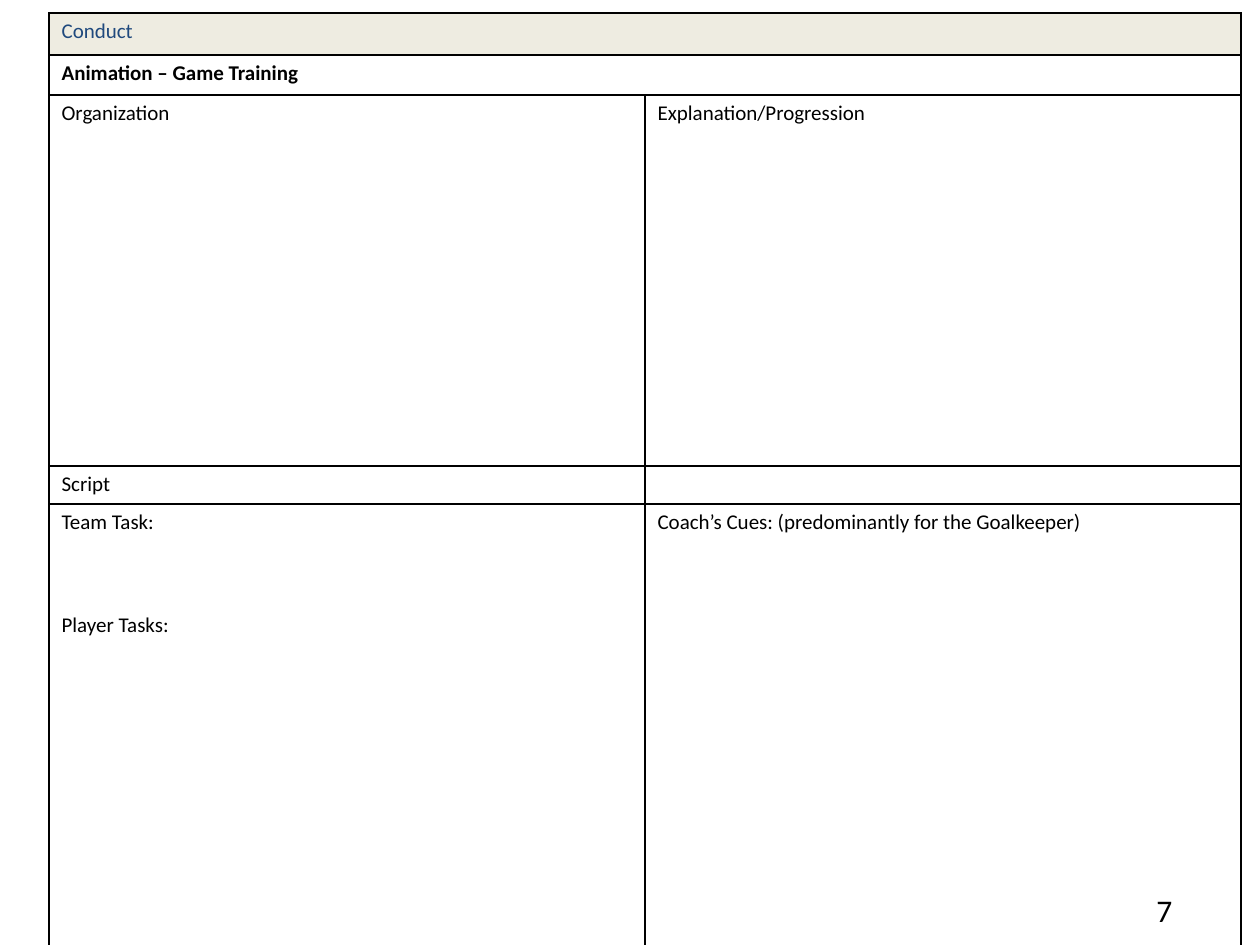
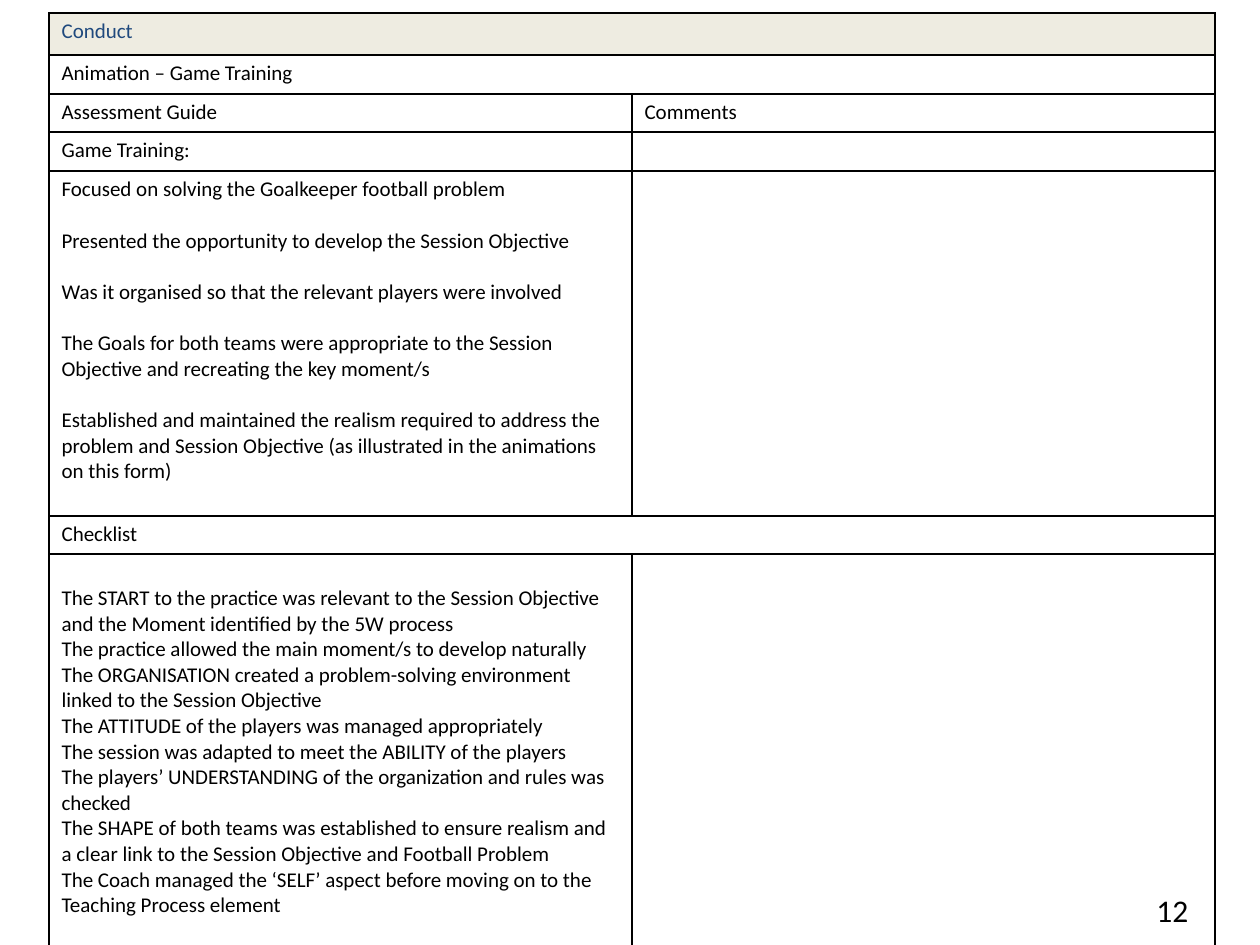
import dataclasses
import lxml.etree
import pptx
import pptx.dml.color
import pptx.oxml.ns
import pptx.util


@dataclasses.dataclass(frozen=True)
class Theme:
    font: str = "Calibri"
    ink: str = "000000"
    blue: str = "1F497D"
    sand: str = "EEECE1"
    white: str = "FFFFFF"
    body: int = 12
    number: int = 18
    line: float = 14.65
    rule: int = 1


@dataclasses.dataclass(frozen=True)
class Row:
    high: int
    left: tuple = ()
    right: tuple = ()
    span: bool = False
    bold: bool = False
    head: bool = False
    gap: int = 0
    lead: int = 0


def px(count):
    return pptx.util.Emu(round(count * 914400 / 126))


def color(code):
    return pptx.dml.color.RGBColor.from_string(code)


def child(node, tag, **attrs):
    return lxml.etree.SubElement(node, pptx.oxml.ns.qn(tag), **attrs)


class Deck:
    def __init__(self, theme):
        self.theme = theme
        self.file = pptx.Presentation()
        self.file.slide_width = px(1260)
        self.file.slide_height = px(945)
        self.slide = None

    def page(self):
        self.slide = self.file.slides.add_slide(self.file.slide_layouts[6])

    def run(self, para, text, size, ink, bold=False):
        font_run = para.add_run()
        font_run.text = text
        font = font_run.font
        font.name, font.size, font.bold = self.theme.font, pptx.util.Pt(size), bold
        font.color.rgb = color(ink)

    def border(self, cell):
        props = cell._tc.get_or_add_tcPr()
        width = str(pptx.util.Pt(self.theme.rule))
        for side in ("a:lnL", "a:lnR", "a:lnT", "a:lnB"):
            line = child(props, side, w=width)
            child(child(line, "a:solidFill"), "a:srgbClr", val=self.theme.ink)

    def cell(self, cell, row, lines):
        theme = self.theme
        self.border(cell)
        cell.fill.solid()
        cell.fill.fore_color.rgb = color(theme.sand if row.head else theme.white)
        cell.margin_top = px(6) + pptx.util.Pt(theme.line * row.lead)
        frame = cell.text_frame
        if not lines:
            child(frame.paragraphs[0]._p, "a:endParaRPr", sz=str(theme.body * 100))
        for index, text in enumerate(lines):
            para = frame.add_paragraph() if index else frame.paragraphs[0]
            if index and row.gap:
                para.space_before = pptx.util.Pt(theme.line * row.gap)
            ink = theme.blue if row.head else theme.ink
            self.run(para, text, theme.body, ink, row.bold)

    def table(self, left, top, wide, rows):
        high = sum(row.high for row in rows)
        shape = self.slide.shapes.add_table(
            len(rows), 2, px(left), px(top), px(2 * wide), px(high))
        table = shape.table
        table.first_row = table.horz_banding = False
        for column in table.columns:
            column.width = px(wide)
        for index, row in enumerate(rows):
            table.rows[index].height = px(row.high)
            first, second = table.cell(index, 0), table.cell(index, 1)
            if row.span:
                first.merge(second)
            self.cell(first, row, row.left)
            self.cell(second, row, row.right)

    def number(self, text):
        box = self.slide.shapes.add_textbox(px(1144), px(885), px(66), px(50))
        box.text_frame.word_wrap = True
        self.run(box.text_frame.paragraphs[0], text, self.theme.number, self.theme.ink)

    def form(self, wide, rows, number):
        self.page()
        head = Row(42, ("Conduct",), span=True, head=True)
        self.table(49, 13, wide, [head, *rows])
        self.number(number)


TOPIC = ("Animation – Game Training",)

PLAN = [
    Row(40, TOPIC, span=True, bold=True),
    Row(371, ("Organization",), ("Explanation/Progression",)),
    Row(38, ("Script",)),
    Row(444, ("Team Task:", "Player Tasks:"),
        ("Coach’s Cues: (predominantly for the Goalkeeper)",), gap=3),
]

GUIDE = [
    Row(39, TOPIC, span=True),
    Row(38, ("Assessment Guide",), ("Comments",)),
    Row(39, ("Game Training:",)),
    Row(345, (
        "Focused on solving the Goalkeeper football problem",
        "Presented the opportunity to develop the Session Objective",
        "Was it organised so that the relevant players were involved",
        "The Goals for both teams were appropriate to the Session Objective "
        "and recreating the key moment/s",
        "Established and maintained the realism required to address the problem "
        "and Session Objective (as illustrated in the animations on this form)",
    ), gap=1),
    Row(38, ("Checklist",), span=True),
    Row(394, (
        "The START to the practice was relevant to the Session Objective "
        "and the Moment identified by the 5W process",
        "The practice allowed the main moment/s to develop naturally",
        "The ORGANISATION created a problem-solving environment "
        "linked to the Session Objective",
        "The ATTITUDE of the players was managed appropriately",
        "The session was adapted to meet the ABILITY of the players",
        "The players’ UNDERSTANDING of the organization and rules was checked",
        "The SHAPE of both teams was established to ensure realism "
        "and a clear link to the Session Objective and Football Problem",
        "The Coach managed the ‘SELF’ aspect before moving on "
        "to the Teaching Process element",
    ), lead=1),
]


def main():
    deck = Deck(Theme())
    deck.form(596, PLAN, "7")
    deck.form(583, GUIDE, "12")
    deck.file.save("out.pptx")


if __name__ == "__main__":
    main()
